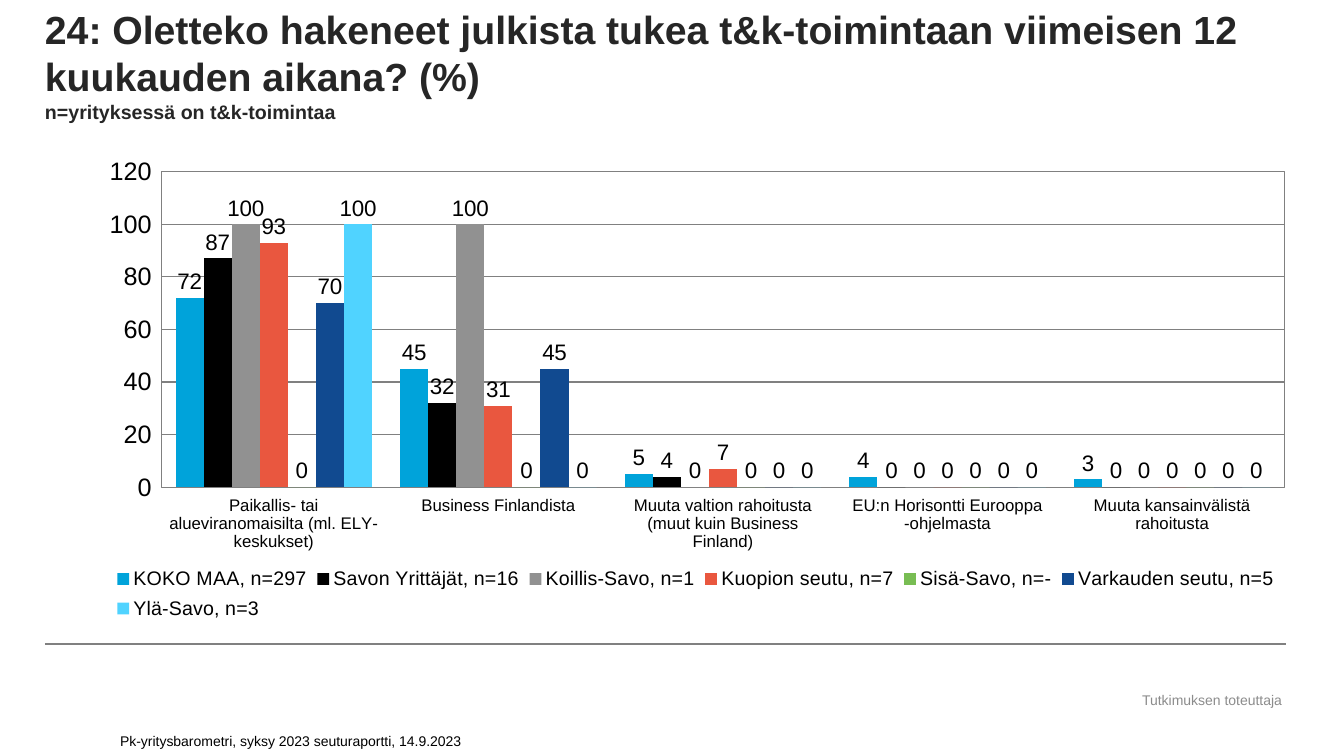
from lxml import etree
from pptx import Presentation
from pptx.chart.data import CategoryChartData
from pptx.dml.color import RGBColor
from pptx.enum.chart import (XL_CHART_TYPE, XL_LABEL_POSITION, XL_LEGEND_POSITION,
                             XL_TICK_LABEL_POSITION, XL_TICK_MARK)
from pptx.enum.shapes import MSO_CONNECTOR
from pptx.enum.text import MSO_ANCHOR, PP_ALIGN
from pptx.oxml import parse_xml
from pptx.oxml.ns import nsdecls, qn
from pptx.util import Pt

COLUMN = XL_CHART_TYPE.COLUMN_CLUSTERED
OUTER = XL_LABEL_POSITION.OUTSIDE_END
RIGHT = XL_LEGEND_POSITION.RIGHT
LOW = XL_TICK_LABEL_POSITION.LOW
NONE = XL_TICK_MARK.NONE
LINE = MSO_CONNECTOR.STRAIGHT
BOTTOM, MIDDLE = MSO_ANCHOR.BOTTOM, MSO_ANCHOR.MIDDLE
LEFT, CENTER = PP_ALIGN.LEFT, PP_ALIGN.CENTER

INK = {"title": "262626", "text": "000000", "credit": "8C8C8C", "rule": "808080"}
PX = 12192000 / 1344


def px(*sizes):
    return [round(n * PX) for n in sizes]


def place(node, index, x, y, w, h, inner=False):
    for old in node.findall(qn("c:layout")):
        node.remove(old)
    target = '<c:layoutTarget val="inner"/>' if inner else ""
    sizes = "".join(f'<c:{k} val="{v}"/>' for k, v in zip("xywh", (x, y, w, h)))
    node.insert(index, parse_xml(
        f'<c:layout {nsdecls("c")}><c:manualLayout>{target}<c:xMode val="edge"/>'
        f'<c:yMode val="edge"/>{sizes}</c:manualLayout></c:layout>'))


prs = Presentation()
prs.slide_width, prs.slide_height = px(1344, 756)
slide = prs.slides.add_slide(prs.slide_layouts[6])

rule = slide.shapes.add_connector(LINE, *px(45, 644, 1286, 644))
rule.line.color.rgb = RGBColor.from_string(INK["rule"])
rule.line.width = Pt(1.5)
etree.SubElement(rule._element.spPr, qn("a:effectLst"))

texts = [
    ((45, 0, 1240, 123), "title", BOTTOM, LEFT, 0, True,
     [("24: Oletteko hakeneet julkista tukea t&k-toimintaan viimeisen 12 kuukauden aikana? (%)", 28),
      ("n=yrityksessä on t&k-toimintaa", 14)]),
    ((1125, 687, 174, 26), "credit", MIDDLE, CENTER, 5, False,
     [("Tutkimuksen toteuttaja", 10)]),
    ((110, 719, 545, 35), "text", BOTTOM, LEFT, 5, False,
     [("Pk-yritysbarometri, syksy 2023 seuturaportti, 14.9.2023", 10)]),
]
for area, ink, anchor, align, inset, bold, parts in texts:
    frame = slide.shapes.add_textbox(*px(*area)).text_frame
    side, edge = px(inset * 2, inset)
    look = {"word_wrap": True, "vertical_anchor": anchor, "margin_left": side,
            "margin_right": side, "margin_top": edge, "margin_bottom": edge}
    for name, value in look.items():
        setattr(frame, name, value)
    para = frame.paragraphs[0]
    para.alignment = align
    for i, (words, size) in enumerate(parts):
        if i:
            para.add_line_break()
        run = para.add_run()
        run.text = words
        for name, value in {"name": "Arial", "size": Pt(size), "bold": bold}.items():
            setattr(run.font, name, value)
        run.font.color.rgb = RGBColor.from_string(INK[ink])

groups = [
    ("KOKO MAA, n=297", "00A3DA", (72, 45, 5, 4, 3)),
    ("Savon Yrittäjät, n=16", "000000", (87, 32, 4, 0, 0)),
    ("Koillis-Savo, n=1", "919191", (100, 100, 0, 0, 0)),
    ("Kuopion seutu, n=7", "E9573F", (93, 31, 7, 0, 0)),
    ("Sisä-Savo, n=-", "78BD53", (0, 0, 0, 0, 0)),
    ("Varkauden seutu, n=5", "114A90", (70, 45, 0, 0, 0)),
    ("Ylä-Savo, n=3", "50D3FF", (100, 0, 0, 0, 0)),
]
data = CategoryChartData()
data.categories = [
    "Paikallis- tai alueviranomaisilta (ml. ELY-keskukset)",
    "Business Finlandista",
    "Muuta valtion rahoitusta (muut kuin Business Finland)",
    "EU:n Horisontti Eurooppa -ohjelmasta",
    "Muuta kansainvälistä rahoitusta",
]
for name, ink, values in groups:
    data.add_series(name, values)
chart = slide.shapes.add_chart(COLUMN, *px(45, 156, 1240, 476), data).chart
chart.has_title = False
chart.font.name = "Arial"
chart.font.size = Pt(18)
chart.font.color.rgb = RGBColor.from_string(INK["text"])

plot = chart.plots[0]
for name, value in {"gap_width": 100, "overlap": 0, "vary_by_categories": False}.items():
    setattr(plot, name, value)
for series, (name, ink, values) in zip(plot.series, groups):
    series.format.fill.solid()
    series.format.fill.fore_color.rgb = RGBColor.from_string(ink)
    series.invert_if_negative = False
    labels = series.data_labels
    look = {"show_value": True, "position": OUTER,
            "number_format": "#,##0", "number_format_is_linked": False}
    for key, value in look.items():
        setattr(labels, key, value)
    labels.font.size = Pt(16)

scale = chart.value_axis
for name, value in {"minimum_scale": 0, "maximum_scale": 120, "major_unit": 20,
                    "has_major_gridlines": True}.items():
    setattr(scale, name, value)
for axis, size in ((scale, 18), (chart.category_axis, 12)):
    for name, value in {"tick_label_position": LOW, "major_tick_mark": NONE,
                        "minor_tick_mark": NONE}.items():
        setattr(axis, name, value)
    axis.tick_labels.font.size = Pt(size)
for owner in (scale, scale.major_gridlines, chart.category_axis):
    owner.format.line.color.rgb = RGBColor.from_string(INK["rule"])
    owner.format.line.width = Pt(0.75)

chart.has_legend = True
legend = chart.legend
legend.position = RIGHT
legend.include_in_layout = False
legend.font.size = Pt(14)
place(legend._element, 1, 0.05, 0.85, 0.95, 0.14)

area = chart._chartSpace.chart.plotArea
place(area, 0, 0.094, 0.033, 0.906, 0.663, True)
area.append(parse_xml(
    f'<c:spPr {nsdecls("c", "a")}><a:noFill/><a:ln w="9525"><a:solidFill>'
    f'<a:srgbClr val="{INK["rule"]}"/></a:solidFill></a:ln></c:spPr>'))

prs.save("out.pptx")
